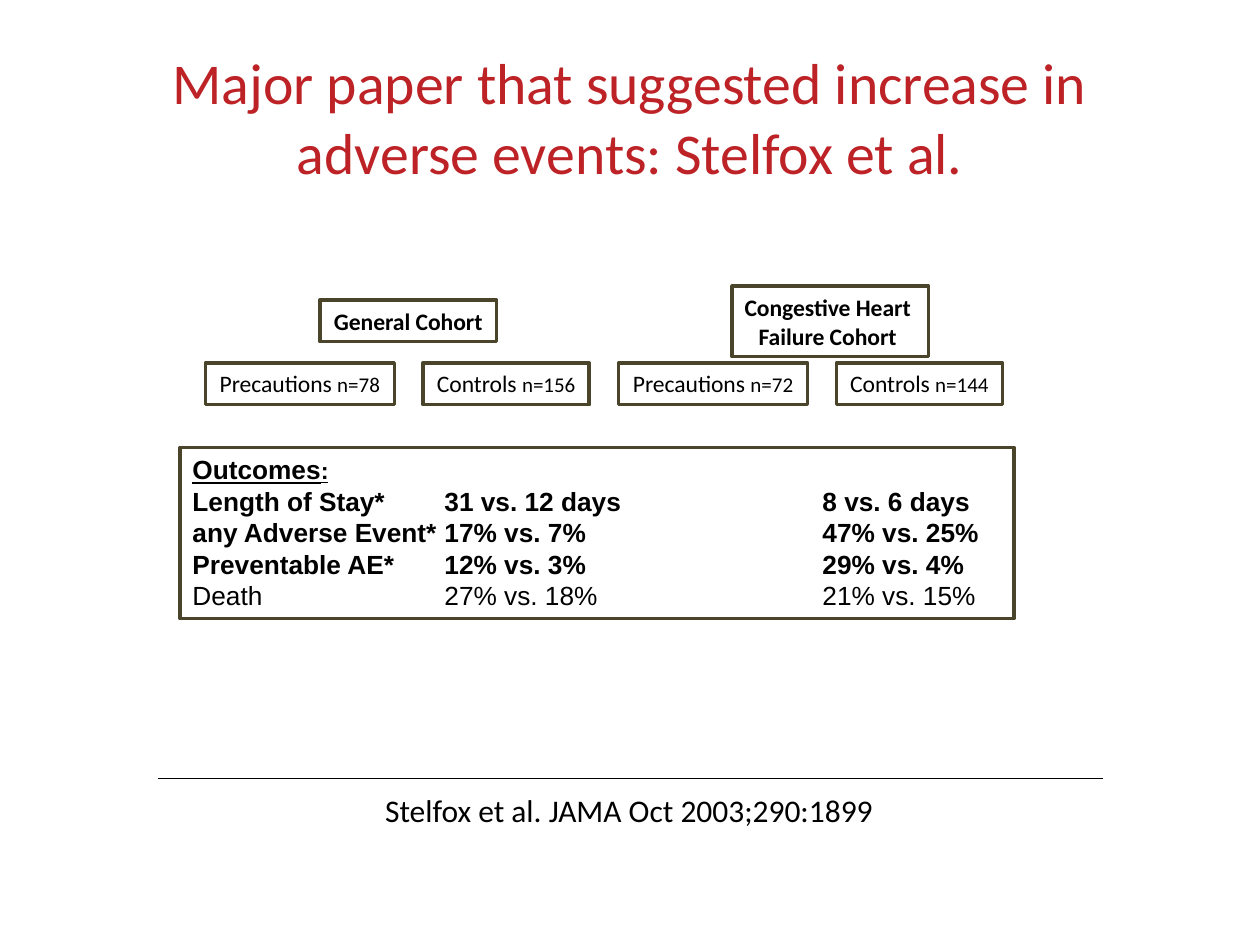
from lxml import etree
from pptx import Presentation
from pptx.dml.color import RGBColor
from pptx.enum.shapes import MSO_CONNECTOR, MSO_SHAPE
from pptx.enum.text import MSO_ANCHOR, MSO_AUTO_SIZE, PP_ALIGN
from pptx.oxml.ns import qn
from pptx.util import Cm, Pt

LEFT, MID = PP_ALIGN.LEFT, PP_ALIGN.CENTER
TOP, HALF = MSO_ANCHOR.TOP, MSO_ANCHOR.MIDDLE
RECT, LINE = MSO_SHAPE.RECTANGLE, MSO_CONNECTOR.STRAIGHT
GROW = MSO_AUTO_SIZE.SHAPE_TO_FIT_TEXT
HUES = {"title": "BD2226", "text": "000000", "frame": "4A452A"}

# Content
TITLE = "Major paper that suggested increase in adverse events: Stelfox et al."
CITE = "Stelfox et al. JAMA Oct 2003;290:1899"
COHORTS = [  # place in cm, lines with alignment, sizes of the two arms
    ((6.45, 6.05, 3.56, 0.84), [("General Cohort", MID)], (78, 156)),
    ((14.76, 5.77, 3.96, 1.42),
     [("Congestive Heart", LEFT), ("Failure Cohort", MID)], (72, 144)),
]
ARMS = [("Precautions ", 4.14, 3.81), ("Controls ", 8.53, 3.35)]
ARM_TOP, ARM_TALL, PAIR_STEP = 7.32, 0.84, 8.33
OUTCOMES = [  # label, general cohort, heart failure cohort, bold
    ("Length of Stay*", "31 vs. 12 days", "8 vs. 6 days", True),
    ("any Adverse Event*", "17% vs. 7%", "47% vs. 25%", True),
    ("Preventable AE*", "12% vs. 3%", "29% vs. 4%", True),
    ("Death", "27% vs. 18%", "21% vs. 15%", False),
]
TABS = (5.08, 12.7)

deck = Presentation()
deck.slide_width, deck.slide_height = Cm(25.4), Cm(19.05)
slide = deck.slides.add_slide(deck.slide_layouts[6])


def style(run, size, face="Calibri", hue="text", bold=False, under=False):
    font = run.font
    font.size, font.name, font.bold, font.underline = Pt(size), face, bold, under
    font.color.rgb = RGBColor.from_string(HUES[hue])


def add_run(para, text, size, **look):
    run = para.add_run()
    run.text = text
    style(run, size, **look)


def add_frame(place, anchor, wrap=False):
    box = slide.shapes.add_shape(RECT, *map(Cm, place))
    box.shadow.inherit = False
    box.fill.background()
    box.line.color.rgb = RGBColor.from_string(HUES["frame"])
    box.line.width = Pt(2)
    body = box.text_frame
    body.word_wrap, body.auto_size = wrap, GROW
    body.vertical_anchor = anchor
    return body


def add_label(place, text, size, hue):
    body = slide.shapes.add_textbox(*map(Cm, place)).text_frame
    body.word_wrap, body.vertical_anchor = True, HALF
    body.text = text
    para = body.paragraphs[0]
    para.alignment = MID
    style(para.runs[0], size, hue=hue)


def set_tabs(para):
    tabs = etree.SubElement(para._p.get_or_add_pPr(), qn("a:tabLst"))
    for stop in TABS:
        etree.SubElement(tabs, qn("a:tab"), pos=str(Cm(stop)), algn="l")


# Title
add_label((1.27, 0.76, 22.86, 3.18), TITLE, 33, "title")

# Cohorts, each above its two arms
for col, (place, lines, counts) in enumerate(COHORTS):
    body = add_frame(place, HALF)
    body.text = "\n".join(text for text, _ in lines)
    for para, (_, align) in zip(body.paragraphs, lines):
        para.alignment = align
        style(para.runs[0], 13.5, bold=True)
    for (name, left, wide), count in zip(ARMS, counts):
        spot = (left + col * PAIR_STEP, ARM_TOP, wide, ARM_TALL)
        para = add_frame(spot, TOP).paragraphs[0]
        para.alignment = MID
        add_run(para, name, 13.5)
        add_run(para, f"n={count}", 12)

# Outcomes
body = add_frame((3.63, 9.02, 16.81, 3.45), TOP, wrap=True)
head = body.paragraphs[0]
head.alignment = LEFT
for text, size in (("Outcomes", 15), (":", 13.5)):
    add_run(head, text, size, face="Arial", bold=True, under=True)
for *cells, bold in OUTCOMES:
    para = body.add_paragraph()
    para.alignment = LEFT
    set_tabs(para)
    add_run(para, "\t".join(cells), 15, face="Arial", bold=bold)

# Rule and citation
rule = slide.shapes.add_connector(LINE, Cm(3.18), Cm(15.7), Cm(22.23), Cm(15.7))
rule.line.color.rgb = RGBColor.from_string(HUES["text"])
rule.line.width = Pt(0.75)
etree.SubElement(rule._element.spPr, qn("a:effectLst"))
add_label((4.11, 15.95, 17.15, 0.76), CITE, 18, "text")

deck.save("out.pptx")
